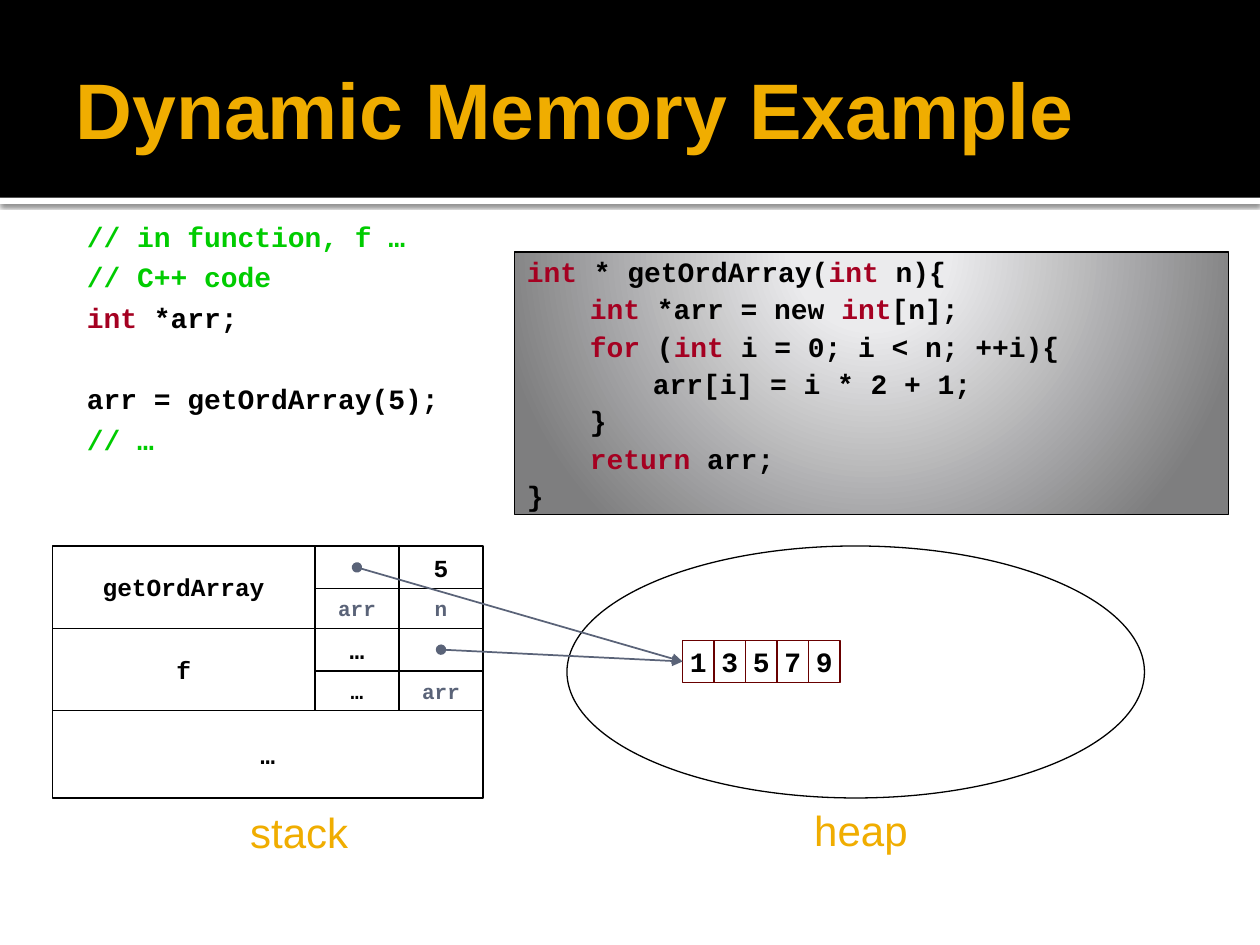
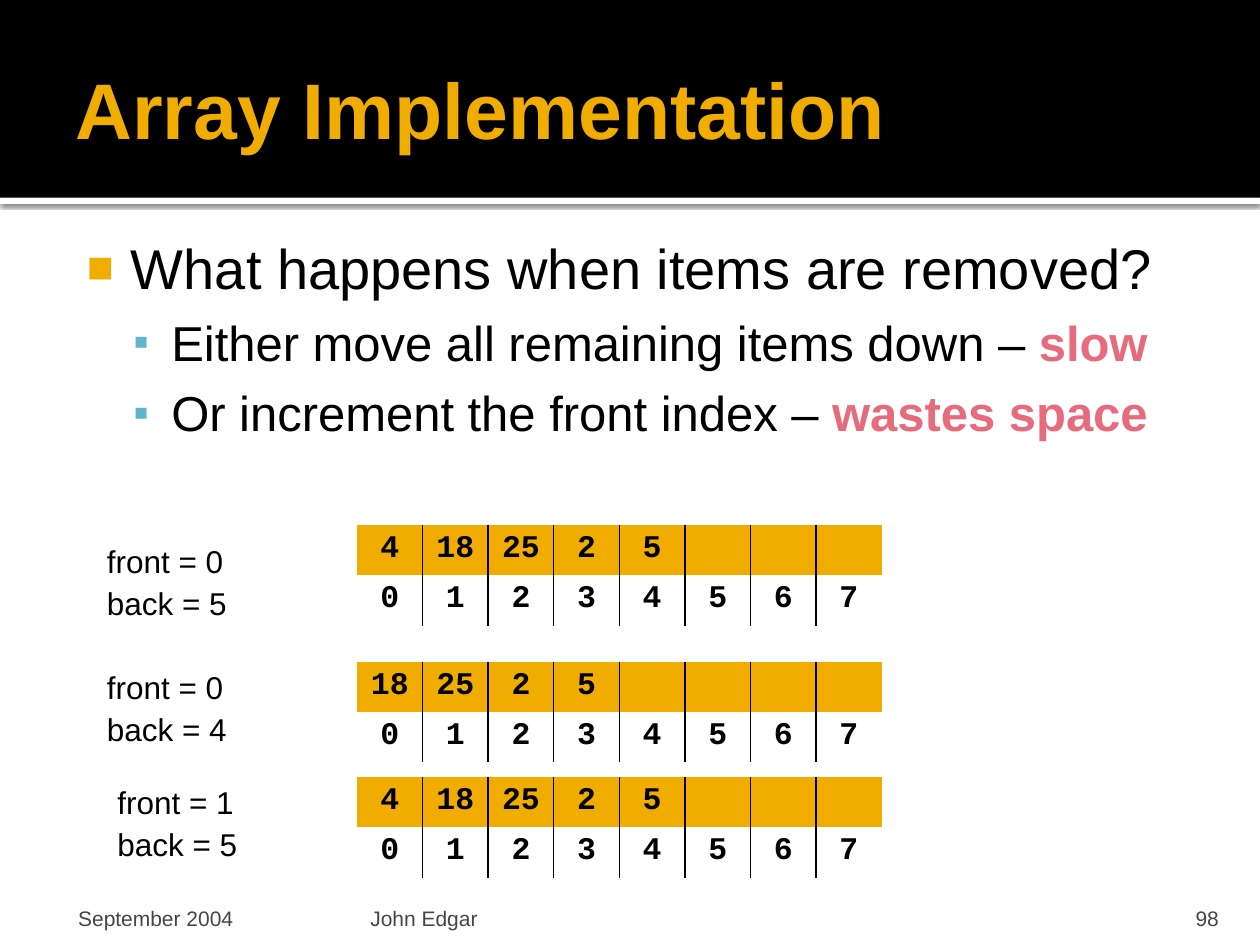
"""Build two slides on dynamic memory and on an array queue."""
from pptx import Presentation
from pptx.dml.color import RGBColor
from pptx.enum.shapes import MSO_CONNECTOR, MSO_SHAPE
from pptx.enum.text import MSO_ANCHOR, PP_ALIGN
from pptx.oxml import parse_xml
from pptx.oxml.ns import nsdecls, qn
from pptx.util import Pt

RECT, OVAL = MSO_SHAPE.RECTANGLE, MSO_SHAPE.OVAL
STRAIGHT = MSO_CONNECTOR.STRAIGHT
TOP, MIDDLE, BOTTOM = MSO_ANCHOR.TOP, MSO_ANCHOR.MIDDLE, MSO_ANCHOR.BOTTOM
LEFT, CENTER, RIGHT = PP_ALIGN.LEFT, PP_ALIGN.CENTER, PP_ALIGN.RIGHT

BLACK = RGBColor(0x00, 0x00, 0x00)
WHITE = RGBColor(0xFF, 0xFF, 0xFF)
GOLD = RGBColor(0xF0, 0xAD, 0x00)
BLUE = RGBColor(0x60, 0xB5, 0xCC)
PINK = RGBColor(0xE6, 0x6C, 0x7D)
GREEN = RGBColor(0x00, 0xCC, 0x00)
RED = RGBColor(0xA5, 0x00, 0x21)
MAROON = RGBColor(0x68, 0x00, 0x00)
SLATE = RGBColor(0x5A, 0x63, 0x78)
GRAY = RGBColor(0x45, 0x45, 0x45)
PALE = RGBColor(0xEB, 0xEB, 0xED)
STEEL = RGBColor(0x7E, 0x7E, 0x7F)

SANS, MONO = "Arial", "Courier New"
BARE_GRID = "{2D5ABB26-0587-4C30-8999-92F81FD0307C}"
PLAIN = dict(size=18, face=SANS, color=BLACK, bold=False, accent=RED,
             align=LEFT, lead=1, before=0, after=0, indent=0, first=0,
             bullet=None)
CODE = dict(size=16, face=MONO, bold=True, lead=0.9)
CELL = dict(size=14, face=MONO, bold=True, align=CENTER, before=4,
            anchor=MIDDLE, inset=(0, 0, 0, 0))


def make(tag, rest):
    """Return a drawing element from its tag and the rest of its markup."""
    return parse_xml(f"<a:{tag} {nsdecls('a')} {rest}")


def write(frame, lines, anchor=TOP, inset=(7.2, 3.6, 7.2, 3.6), **look):
    """Fill a frame with lines; text between bars takes the accent."""
    frame.word_wrap = True
    frame.vertical_anchor = anchor
    (frame.margin_left, frame.margin_top,
     frame.margin_right, frame.margin_bottom) = map(Pt, inset)
    for place, line in enumerate(lines):
        text, own = line if isinstance(line, tuple) else (line, {})
        form = PLAIN | look | own
        para = frame.add_paragraph() if place else frame.paragraphs[0]
        para.alignment = form["align"]
        para.line_spacing = form["lead"]
        para.space_before = Pt(form["before"])
        para.space_after = Pt(form["after"])
        props = para._p.get_or_add_pPr()
        props.set("marL", str(Pt(form["indent"])))
        props.set("indent", str(Pt(form["first"])))
        if form["bullet"]:
            sign, color, scale = form["bullet"]
            props.append(make("buClr", f'><a:srgbClr val="{color}"/></a:buClr>'))
            props.append(make("buSzPct", f'val="{scale * 1000}"/>'))
            props.append(make("buFont", f'typeface="{SANS}"/>'))
            props.append(make("buChar", f'char="{sign}"/>'))
        for part, piece in enumerate(text.split("|")):
            if piece:
                marked = part % 2 == 1
                run = para.add_run()
                run.text = piece
                run.font.name = form["face"]
                run.font.size = Pt(form["size"])
                run.font.bold = form["bold"] or marked
                run.font.color.rgb = form["accent"] if marked else form["color"]


class Deck:
    """Hold the shared style and the current slide."""

    def __init__(self):
        """Start an empty deck."""
        self.show = Presentation()
        self.show.slide_width, self.show.slide_height = Pt(720), Pt(540)
        self.slide = None

    def start(self, title):
        """Add a slide with its title band."""
        self.slide = self.show.slides.add_slide(self.show.slide_layouts[6])
        rule = self.box(0, 113, 720, 3.6, fill=WHITE, line=None)
        rule._element.spPr.find(qn("a:effectLst")).append(make(
            "outerShdw",
            f'blurRad="{Pt(2.5)}" dist="{Pt(0.8)}" dir="5400000">'
            '<a:srgbClr val="000000"><a:alpha val="60000"/></a:srgbClr>'
            "</a:outerShdw>"))
        self.box(0, 0, 720, 113, fill=BLACK, line=None)
        self.text([title], 36, 12.2, 648, 98.6, size=45, bold=True,
                  color=GOLD, anchor=MIDDLE, inset=(7.2, 3.6, 3.6, 3.6))

    def text(self, lines, left, top, width, height, **look):
        """Add a text box."""
        area = self.slide.shapes.add_textbox(
            Pt(left), Pt(top), Pt(width), Pt(height))
        write(area.text_frame, lines, **look)

    def box(self, left, top, width, height, lines=(), kind=RECT,
            fill=None, line=BLACK, **look):
        """Add a preset shape with optional text."""
        shape = self.slide.shapes.add_shape(
            kind, Pt(left), Pt(top), Pt(width), Pt(height))
        shape.shadow.inherit = False
        if fill is None:
            shape.fill.background()
        else:
            shape.fill.solid()
            shape.fill.fore_color.rgb = fill
        if line is None:
            shape.line.fill.background()
        else:
            shape.line.color.rgb = line
            shape.line.width = Pt(0.75)
        write(shape.text_frame, lines, **look)
        return shape

    def glow(self, shape):
        """Give a shape a round gradient lit from above."""
        shape.fill.gradient()
        tints = ((PALE, 0.2), (STEEL, 1))
        for stop, (color, place) in zip(shape.fill.gradient_stops, tints):
            stop.color.rgb = color
            stop.position = place
        grad = shape._element.spPr.find(qn("a:gradFill"))
        grad.remove(grad.find(qn("a:lin")))
        grad.append(make(
            "path", 'path="circle"><a:fillToRect l="10000" t="-25000" '
            'r="10000" b="125000"/></a:path>'))

    def arrow(self, source, target):
        """Point from the middle of one box to the left side of another."""
        link = self.slide.shapes.add_connector(
            STRAIGHT, source.left + source.width // 2,
            source.top + source.height // 2,
            target.left, target.top + target.height // 2)
        link.end_connect(target, 1)
        link.line.color.rgb = SLATE
        link.line.width = Pt(1)
        props = link._element.spPr
        edge = props.find(qn("a:ln"))
        edge.append(make("headEnd", 'type="oval"/>'))
        edge.append(make("tailEnd", 'type="triangle"/>'))
        props.append(make("effectLst", "/>"))

    def queue(self, items, top, height):
        """Add a table of items above their index numbers."""
        count = 8
        rows = (items + [""] * (count - len(items)), range(count))
        grid = self.slide.shapes.add_table(
            2, count, Pt(204), Pt(top), Pt(300), Pt(2 * height)).table
        grid.first_row = grid.horz_banding = False
        grid._tbl.tblPr.find(qn("a:tableStyleId")).text = BARE_GRID
        for r, row in enumerate(rows):
            grid.rows[r].height = Pt(height)
            for c, item in enumerate(row):
                cell = grid.cell(r, c)
                if r == 0:
                    cell.fill.solid()
                    cell.fill.fore_color.rgb = GOLD
                else:
                    cell.fill.background()
                write(cell.text_frame, [str(item)], face=MONO, bold=True,
                      align=CENTER)
                for side, edge in (("lnR", count - 1), ("lnL", 0)):
                    if c != edge:
                        cell._tc.get_or_add_tcPr().insert(0, make(
                            side, f'w="{Pt(1)}"><a:solidFill><a:srgbClr '
                            f'val="{BLACK}"/></a:solidFill></a:{side}>'))

    def footer(self, date, author, number):
        """Add the date, the author and the page number."""
        parts = ((date, 36, 168, 8.64, LEFT), (author, 208, 433, 3.6, LEFT),
                 (number, 646, 57.6, 7.2, RIGHT))
        for text, left, width, pad, align in parts:
            self.text([text], left, 510, width, 21.6, size=12, color=GRAY,
                      align=align, anchor=BOTTOM, inset=(pad, 3.6, pad, 0))


def memory(deck):
    """Draw the stack and heap slide."""
    deck.start("Dynamic Memory Example")
    note = dict(accent=GREEN)
    deck.text([("|// in function, f …|", note), ("|// C++ code|", note),
               ("|int| *arr;", dict(after=29.3)), "arr = getOrdArray(5);",
               ("|// …|", note)],
              36, 120.2, 258, 150, indent=9.4, after=6,
              inset=(4.3, 7.2, 7.2, 3.6), **CODE)
    code = ((0, "|int| * getOrdArray(|int| n){"),
            (1, "|int| *arr = new |int|[n];"),
            (1, "|for| (|int| i = 0; i < n; ++i){"),
            (2, "arr[i] = i * 2 + 1;"), (1, "}"), (1, "|return| arr;"),
            (0, "}"))
    panel = deck.box(294, 144, 408, 150,
                     [(text, dict(indent=36 * level)) for level, text in code],
                     before=4.1, **CODE)
    deck.glow(panel)

    calls = (("getOrdArray", (("", "arr"), ("5", "n"))),
             ("f", (("…", "…"), ("", "arr"))))
    sources = []
    for row, (name, fields) in enumerate(calls):
        top = 312 + 47 * row
        deck.box(30, top, 150, 47, [name], **CELL)
        for column, (value, label) in enumerate(fields):
            left = 180 + 48 * column
            slot = deck.box(left, top, 48, 24.5, [value], **CELL)
            if not value:
                sources.append(slot)
            tint = BLACK if label == "…" else SLATE
            deck.box(left, top + 24.5, 48, 22.5, [label],
                     **CELL | dict(size=12, color=tint))
    deck.box(30, 406, 246, 50, ["…"], **CELL)
    deck.box(324, 312, 330, 144, kind=OVAL)
    cells = [deck.box(390 + 18 * n, 366, 18, 24, [str(2 * n + 1)],
                      line=MAROON, **CELL | dict(size=16)) for n in range(5)]
    for source in sources:
        deck.arrow(source, cells[0])
    for name, left, top, width in (("stack", 66, 457.2, 210),
                                   ("heap", 330, 456, 324)):
        deck.text([name], left, top, width, 36, size=24, color=GOLD,
                  align=CENTER)


def array(deck):
    """Draw the array queue slide."""
    deck.start("Array Implementation")
    head = dict(size=32, indent=34.56, first=-25.2, bullet=("■", GOLD, 80))
    sub = dict(size=28, indent=57.6, first=-21.6, before=6.7,
               bullet=("▪", BLUE, 90))
    deck.text([("What happens when items are removed?", head),
               ("Either move all remaining items down – |slow|", sub),
               ("Or increment the front index – |wastes space|", sub)],
              36, 126, 648, 156, accent=PINK, inset=(4.3, 7.2, 7.2, 3.6))
    full = [4, 18, 25, 2, 5]
    states = ((full, 300, 27.9, 0, 5, 54, 306),
              (full[1:], 378, 28.75, 0, 4, 54, 378),
              (full, 444, 28.75, 1, 5, 60, 444))
    for items, top, height, front, back, left, level in states:
        deck.queue(items, top, height)
        for step, label in enumerate((f"front = {front}", f"back = {back}")):
            deck.text([label], left, level + 24 * step, 96, 29)
    deck.footer("September 2004", "John Edgar", "98")


def main():
    """Build and save the deck."""
    deck = Deck()
    memory(deck)
    array(deck)
    deck.show.save("out.pptx")


if __name__ == "__main__":
    main()
